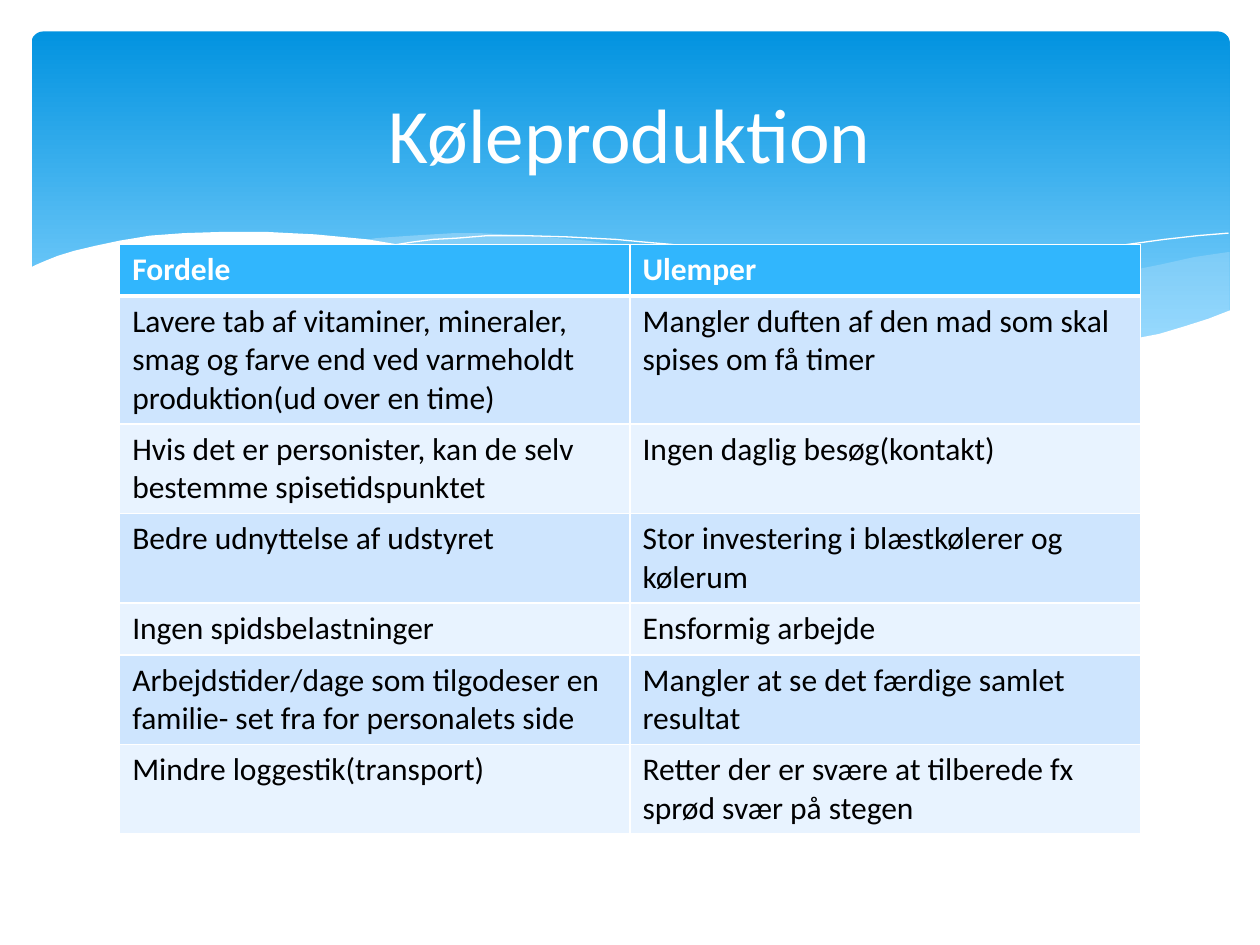
import pptx
import pptx.dml.color
import pptx.enum.text
import pptx.oxml
import pptx.oxml.ns
import pptx.util
from pptx.dml.color import RGBColor
from pptx.enum.shapes import MSO_SHAPE
from pptx.util import Inches, Pt

WHITE = RGBColor(0xFF, 0xFF, 0xFF)
BLACK = RGBColor(0x00, 0x00, 0x00)
SKY_TOP = RGBColor(0x02, 0x93, 0xE0)
SKY_BOTTOM = RGBColor(0x83, 0xD3, 0xFE)
MIST = RGBColor(0xC6, 0xE7, 0xFC)
HEADER = RGBColor(0x31, 0xB6, 0xFD)
BAND_DARK = RGBColor(0xCE, 0xE5, 0xFE)
BAND_LIGHT = RGBColor(0xE8, 0xF3, 0xFF)

RIGHT_WAVE = [
    (9.75, 2), (9.48, 2.04), (9.21, 2.1), (8.91, 2.16), (8.61, 2.23),
    (8.05, 2.37), (7.53, 2.48), (7.06, 2.57), (6.61, 2.65), (6.91, 2.69),
    (7.19, 2.72), (7.45, 2.75), (7.69, 2.77), (8.03, 2.78), (8.35, 2.77),
    (8.63, 2.75), (8.89, 2.72), (9.13, 2.67), (9.35, 2.62), (9.49, 2.57),
    (9.63, 2.52), (9.76, 2.47), (9.76, 2)]
MIDDLE_WAVE = [
    (8.93, 2.73), (8.66, 2.69), (8.37, 2.65), (8.07, 2.6), (7.75, 2.54),
    (7.41, 2.47), (7.06, 2.4), (6.68, 2.31), (6.29, 2.22), (5.98, 2.14),
    (5.69, 2.08), (5.41, 2.03), (5.14, 1.98), (4.89, 1.94), (4.65, 1.91),
    (4.42, 1.89), (4.2, 1.87), (3.99, 1.86), (3.8, 1.85), (3.61, 1.85),
    (3.28, 1.87), (2.99, 1.89), (2.86, 1.91), (3.23, 1.96), (3.62, 2.03),
    (4.04, 2.11), (4.49, 2.22), (4.91, 2.32), (5.3, 2.4), (5.66, 2.48),
    (6.01, 2.55), (6.34, 2.61), (6.65, 2.66), (6.95, 2.7), (7.22, 2.74),
    (7.48, 2.76), (7.73, 2.77), (7.96, 2.78), (8.38, 2.78), (8.67, 2.76)]
LONG_LINE = [
    (3.09, 1.95), (3.28, 1.92), (3.44, 1.9), (3.63, 1.89), (3.87, 1.87),
    (4.16, 1.87), (4.5, 1.88), (4.89, 1.9), (5.1, 1.92), (5.33, 1.94),
    (5.56, 1.97), (5.82, 2), (6.08, 2.04), (6.36, 2.08), (6.65, 2.13),
    (6.95, 2.19), (7.27, 2.26), (7.6, 2.33), (7.95, 2.41), (8.31, 2.51),
    (8.69, 2.61), (9.07, 2.72)]
RIGHT_LINE = [
    (6.13, 2.57), (6.53, 2.46), (6.95, 2.35), (7.2, 2.29), (7.48, 2.23),
    (7.76, 2.16), (8.06, 2.1), (8.36, 2.04), (8.66, 1.99), (8.95, 1.94),
    (9.24, 1.9), (9.51, 1.87), (9.75, 1.85)]
WHITE_WAVE = [
    (9.77, 2.46), (9.59, 2.53), (9.4, 2.59), (9.2, 2.65), (8.99, 2.69),
    (8.75, 2.73), (8.5, 2.75), (8.23, 2.77), (7.93, 2.76), (7.61, 2.75),
    (7.26, 2.72), (6.88, 2.68), (6.48, 2.62), (6.03, 2.54), (5.55, 2.45),
    (5.03, 2.33), (4.47, 2.2), (4.18, 2.13), (3.91, 2.07), (3.65, 2.02),
    (3.4, 1.97), (3.16, 1.94), (2.92, 1.9), (2.71, 1.88), (2.5, 1.86),
    (2.3, 1.85), (2.11, 1.84), (1.77, 1.84), (1.46, 1.85), (1.19, 1.87),
    (0.95, 1.91), (0.76, 1.95), (0.59, 1.99), (0.46, 2.03), (0.36, 2.07),
    (0.29, 2.1), (0.23, 2.13), (0.23, 3.29), (9.77, 3.29)]

ROWS = [
    ("Fordele", "Ulemper"),
    ("Lavere tab af vitaminer, mineraler, smag og farve end ved varmeholdt "
     "produktion(ud over en time)",
     "Mangler duften af den mad som skal spises om få timer"),
    ("Hvis det er personister, kan de selv bestemme spisetidspunktet",
     "Ingen daglig besøg(kontakt)"),
    ("Bedre udnyttelse af udstyret",
     "Stor investering i blæstkølerer og kølerum"),
    ("Ingen spidsbelastninger", "Ensformig arbejde"),
    ("Arbejdstider/dage som tilgodeser en familie- set fra for personalets side",
     "Mangler at se det færdige samlet resultat"),
    ("Mindre loggestik(transport)",
     "Retter der er svære at tilberede fx sprød svær på stegen"),
]


class Deck:
    font = "Calibri"

    def __init__(self, width, height):
        self.prs = pptx.Presentation()
        self.prs.slide_width, self.prs.slide_height = Inches(width), Inches(height)
        self.s = self.prs.slides.add_slide(self.prs.slide_layouts[6])

    def style(self, p, size, color, bold=False):
        for r in p.runs:
            r.font.name, r.font.size, r.font.bold = self.font, Pt(size), bold
            r.font.color.rgb = color

    def banner(self, x, y, w, h):
        sp = self.s.shapes.add_shape(
            MSO_SHAPE.ROUNDED_RECTANGLE, Inches(x), Inches(y), Inches(w), Inches(h))
        sp.adjustments[0] = 0.034
        sp.shadow.inherit = False
        sp.line.fill.background()
        sp.fill.gradient()
        sp.fill.gradient_angle = 270
        stops = sp.fill.gradient_stops
        for stop, color, position in zip(stops, (SKY_TOP, SKY_BOTTOM), (0, 0.9)):
            stop.color.rgb, stop.position = color, position

    def outline(self, points, close):
        pts = [(Inches(x), Inches(y)) for x, y in points]
        builder = self.s.shapes.build_freeform(*pts[0])
        builder.add_line_segments(pts[1:], close=close)
        sp = builder.convert_to_shape()
        sp.shadow.inherit = False
        return sp

    def wave(self, points, color, opacity=100):
        sp = self.outline(points, True)
        sp.line.fill.background()
        sp.fill.solid()
        sp.fill.fore_color.rgb = color
        if opacity < 100:
            clr = sp.fill._xPr.find(".//" + pptx.oxml.ns.qn("a:srgbClr"))
            alpha = pptx.oxml.parse_xml(
                f'<a:alpha {pptx.oxml.ns.nsdecls("a")} val="{opacity * 1000}"/>')
            clr.append(alpha)

    def curve(self, points, color):
        sp = self.outline(points, False)
        sp.fill.background()
        sp.line.color.rgb = color
        sp.line.width = Pt(0)

    def title(self, text, x, y, w, h):
        tf = self.s.shapes.add_textbox(
            Inches(x), Inches(y), Inches(w), Inches(h)).text_frame
        tf.word_wrap = True
        tf.vertical_anchor = pptx.enum.text.MSO_ANCHOR.MIDDLE
        tf.text = text
        p = tf.paragraphs[0]
        p.alignment = pptx.enum.text.PP_ALIGN.CENTER
        self.style(p, 44, WHITE)

    def borders(self, cell, color, widths):
        """Draw left, right, top and bottom borders, widths in points."""
        tc_pr = cell._tc.get_or_add_tcPr()
        for i, (side, width) in enumerate(zip("LRTB", widths)):
            tc_pr.insert(i, pptx.oxml.parse_xml(
                f'<a:ln{side} {pptx.oxml.ns.nsdecls("a")} w="{Pt(width)}">'
                f'<a:solidFill><a:srgbClr val="{color}"/></a:solidFill></a:ln{side}>'))

    def table(self, rows, x, y, w, row_height):
        """Add a banded table; rows grow from row_height to fit their text."""
        t = self.s.shapes.add_table(
            len(rows), len(rows[0]), Inches(x), Inches(y), Inches(w),
            Inches(row_height * len(rows))).table
        for i, row in enumerate(rows):
            head = i == 0
            fill = HEADER if head else (BAND_LIGHT, BAND_DARK)[i % 2]
            for j, text in enumerate(row):
                cell = t.cell(i, j)
                cell.text = text
                self.style(cell.text_frame.paragraphs[0], 18,
                           WHITE if head else BLACK, head)
                cell.fill.solid()
                cell.fill.fore_color.rgb = fill
                self.borders(cell, WHITE, (1, 1, 3 if i == 1 else 1, 3 if head else 1))


def main():
    deck = Deck(10, 7.5)
    deck.banner(0.25, 0.25, 9.51, 2.7)
    deck.wave(RIGHT_WAVE, MIST, 29)
    deck.wave(MIDDLE_WAVE, MIST, 40)
    deck.curve(LONG_LINE, WHITE)
    deck.curve(RIGHT_LINE, WHITE)
    deck.wave(WHITE_WAVE, WHITE)
    deck.table(ROWS, 0.95, 1.94, 8.1, 0.41)
    deck.title("Køleproduktion", 0.5, 0.37, 9, 1.37)
    deck.prs.save("out.pptx")


if __name__ == "__main__":
    main()
